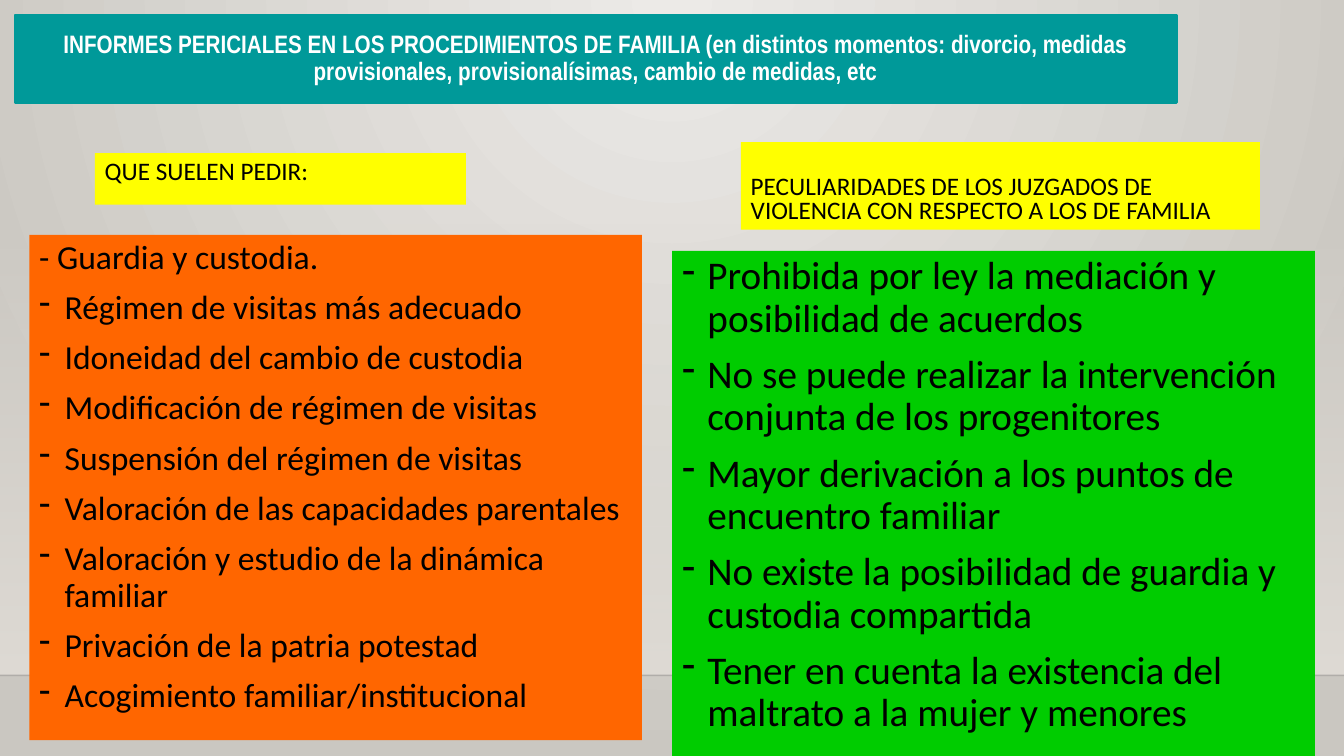
from pptx import Presentation
from pptx.dml.color import RGBColor
from pptx.enum.shapes import MSO_CONNECTOR as Connector, MSO_SHAPE as Shape
from pptx.enum.text import MSO_ANCHOR as Anchor, MSO_AUTO_SIZE as AutoSize, PP_ALIGN as Align
from pptx.oxml import parse_xml
from pptx.oxml.ns import nsdecls
from pptx.oxml.xmlchemy import OxmlElement
from pptx.util import Cm, Pt

COLORS = {
    "glow": "ECEAE7", "edge": "CAC7C1", "wall": "DFDBD5", "floor_line": "000001",
    "title": "009999", "label": "FFFF00", "requests": "FF6600", "court": "00CC00",
    "white": "FFFFFF", "black": "000000",
}
WIDTH, HEIGHT, FLOOR = 33.87, 19.05, 17.02

TITLE = ("INFORMES PERICIALES EN LOS PROCEDIMIENTOS DE FAMILIA (en distintos momentos: "
         "divorcio, medidas provisionales, provisionalísimas, cambio de medidas, etc")
REQUESTS_LABEL = "QUE SUELEN PEDIR:"
REQUESTS_LEAD = "- Guardia y custodia."
REQUESTS = [
    "Régimen de visitas más adecuado",
    "Idoneidad del cambio de custodia",
    "Modificación de régimen de visitas",
    "Suspensión del régimen de visitas",
    "Valoración de las capacidades parentales",
    "Valoración y estudio de la dinámica familiar",
    "Privación de la patria potestad",
    "Acogimiento familiar/institucional",
]
COURT_LABEL = "PECULIARIDADES DE LOS JUZGADOS DE VIOLENCIA CON RESPECTO A LOS DE FAMILIA"
COURT = [
    "Prohibida por ley la mediación y posibilidad de acuerdos",
    "No se puede realizar la intervención conjunta de los progenitores",
    "Mayor derivación a los puntos de encuentro familiar",
    "No existe la posibilidad de guardia y custodia compartida",
    "Tener en cuenta la existencia del maltrato a la mujer y menores",
]


def set_format(target, values):
    """Set each attribute named in values on the target."""
    for name, value in values.items():
        setattr(target, name, value)


def rgb(name):
    """Return the named palette colour."""
    return RGBColor.from_string(COLORS[name])


def gradient(stops, direction):
    """Build a gradient fill from (position, colour, opacity) stops in percent."""
    marks = "".join(
        f'<a:gs pos="{position * 1000}"><a:srgbClr val="{COLORS[color]}">'
        f'<a:alpha val="{opacity * 1000}"/></a:srgbClr></a:gs>'
        for position, color, opacity in stops)
    return parse_xml(f'<a:gradFill {nsdecls("a")} rotWithShape="1">'
                     f"<a:gsLst>{marks}</a:gsLst>{direction}</a:gradFill>")


def swap_fill(holder, fill):
    """Replace the solid fill directly inside holder."""
    solid = holder.xpath("./a:solidFill")[0]
    holder.replace(solid, fill)


def add_backdrop(slide):
    """Draw the glowing wall and the line where it meets the floor."""
    slide.background.fill.solid()
    glow = ('<a:path path="circle"><a:fillToRect l="43000" t="0" r="43000" b="100000"/>'
            "</a:path>")
    swap_fill(slide.element.xpath(".//p:bgPr")[0],
              gradient([(0, "glow", 100), (100, "edge", 100)], glow))

    wall = add_panel(slide, (0, 5.61, WIDTH, FLOOR - 5.61), "wall")
    swap_fill(wall.element.spPr, gradient([(0, "wall", 0), (100, "wall", 100)],
                                          '<a:lin ang="5400000" scaled="0"/>'))

    line = slide.shapes.add_connector(Connector.STRAIGHT, 0, Cm(FLOOR), Cm(WIDTH), Cm(FLOOR))
    line.line.width = Pt(1)
    line.line.color.rgb = rgb("floor_line")
    alpha = OxmlElement("a:alpha")
    alpha.set("val", "20000")
    line.line.fill._xPr.xpath(".//a:srgbClr")[0].append(alpha)
    line._element.spPr.append(OxmlElement("a:effectLst"))


def add_panel(slide, box, color):
    """Add a plain filled rectangle in the given box."""
    panel = slide.shapes.add_shape(Shape.RECTANGLE, *map(Cm, box))
    panel.shadow.inherit = False
    panel.fill.solid()
    panel.fill.fore_color.rgb = rgb(color)
    panel.line.fill.background()
    return panel


def write(paragraph, text, size, color="black", font="Calibri", bold=False,
          align=Align.LEFT, spacing=0.9, before=0, bullet=False):
    """Write one formatted paragraph, with a hanging dash if bullet is set."""
    properties = paragraph._p.get_or_add_pPr()
    if bullet:
        properties.set("marL", str(Cm(0.64)))
        properties.set("indent", str(-Cm(0.64)))
        dash = OxmlElement("a:buChar")
        dash.set("char", "-")
        properties.append(dash)
    set_format(paragraph, {"alignment": align, "line_spacing": spacing,
                           "space_before": Pt(before)})
    run = paragraph.add_run()
    run.text = text
    set_format(run.font, {"name": font, "size": Pt(size), "bold": bold})
    run.font.color.rgb = rgb(color)


def prepare_frame(shape, anchor):
    """Set wrapping, margins and anchor of the shape's text and return its frame."""
    set_format(shape.text_frame, {
        "word_wrap": True, "auto_size": AutoSize.NONE, "vertical_anchor": anchor,
        "margin_left": Cm(0.25), "margin_right": Cm(0.25),
        "margin_top": Cm(0.13), "margin_bottom": Cm(0.13)})
    return shape.text_frame


def add_title(slide, box):
    """Move the title placeholder to the box and format it as a banner."""
    title = slide.shapes.title
    set_format(title, dict(zip(("left", "top", "width", "height"), map(Cm, box))))
    title.fill.solid()
    title.fill.fore_color.rgb = rgb("title")
    title.line.color.rgb = rgb("title")
    title.line.width = Pt(2)
    frame = prepare_frame(title, Anchor.MIDDLE)
    write(frame.paragraphs[0], TITLE, 18, "white", "Arial Narrow", True, Align.CENTER)


def add_label(slide, box, text, anchor=Anchor.TOP, spacing=0.9):
    """Add a yellow column heading."""
    frame = prepare_frame(add_panel(slide, box, "label"), anchor)
    write(frame.paragraphs[0], text, 18, spacing=spacing)


def add_list(slide, box, color, size, items, lead=None):
    """Add a coloured panel of dashed items, optionally after a lead line."""
    frame = prepare_frame(add_panel(slide, box, color), Anchor.TOP)
    lines = [(lead, False)] if lead else []
    lines += [(item, True) for item in items]
    for index, (text, bullet) in enumerate(lines):
        paragraph = frame.add_paragraph() if index else frame.paragraphs[0]
        write(paragraph, text, size, before=10 if index else 0, bullet=bullet)


def main():
    """Build and save the slide."""
    presentation = Presentation()
    set_format(presentation, {"slide_width": Cm(WIDTH), "slide_height": Cm(HEIGHT)})
    slide = presentation.slides.add_slide(presentation.slide_layouts.get_by_name("Title Only"))
    add_backdrop(slide)
    add_title(slide, (0.38, 0.38, 29.26, 2.21))
    add_list(slide, (0.74, 5.92, 15.44, 12.73), "requests", 24, REQUESTS, REQUESTS_LEAD)
    add_list(slide, (16.94, 6.32, 16.2, 12.73), "court", 28, COURT)
    add_label(slide, (2.39, 3.86, 9.35, 1.3), REQUESTS_LABEL)
    add_label(slide, (18.67, 3.58, 13.08, 2.21), COURT_LABEL, Anchor.BOTTOM, 0.8)
    presentation.save("out.pptx")


if __name__ == "__main__":
    main()
